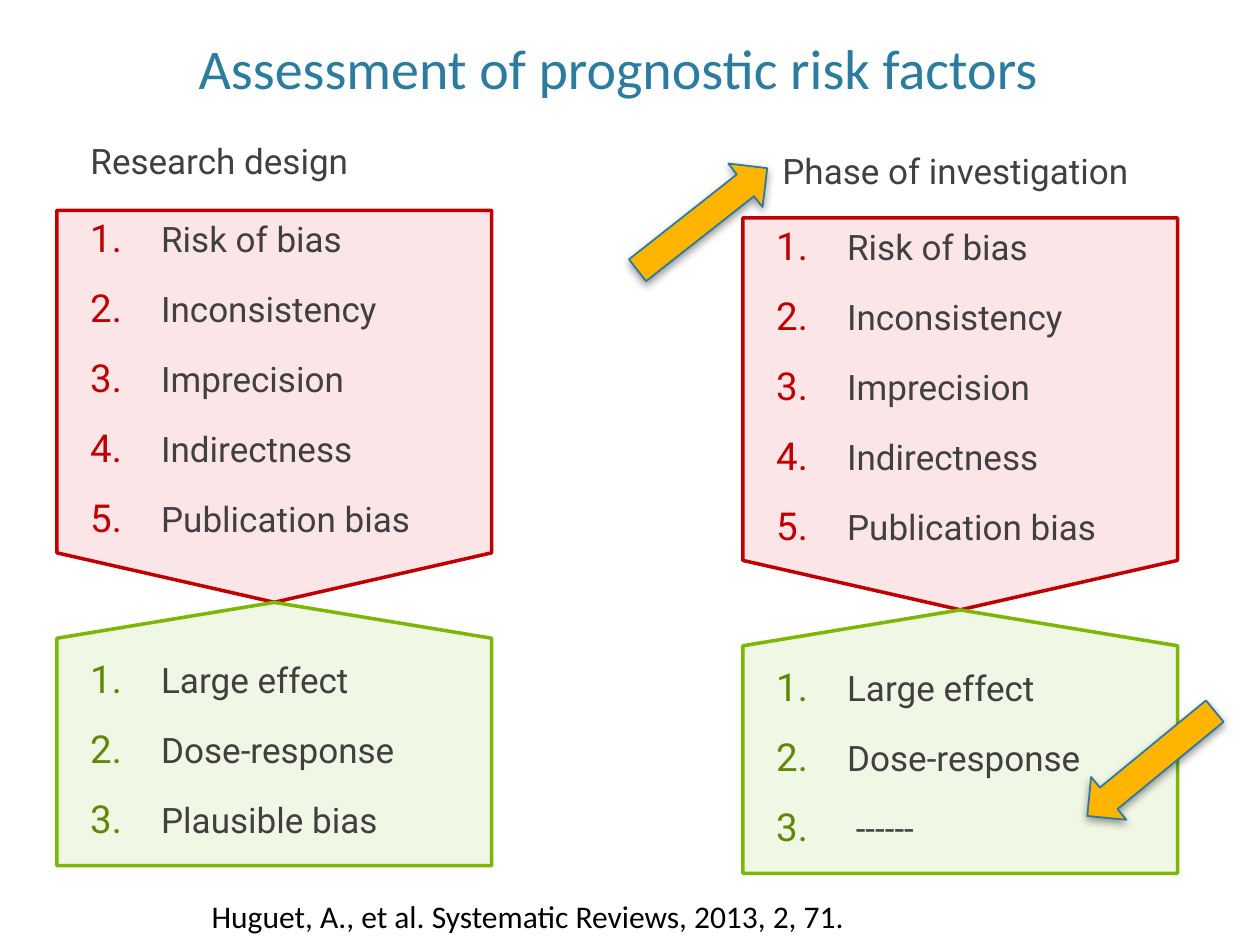
from dataclasses import dataclass
from typing import Any

from lxml.etree import SubElement
from pptx import Presentation
from pptx.dml.color import RGBColor
from pptx.enum.shapes import MSO_SHAPE as Preset
from pptx.enum.text import MSO_ANCHOR as Anchor, PP_ALIGN as Align
from pptx.oxml.ns import qn
from pptx.util import Pt

RED = RGBColor(0xC0, 0x00, 0x00)
RED_TINT = RGBColor(0xE4, 0x00, 0x19)
GREEN = RGBColor(0x7E, 0xB6, 0x06)
DARK_GREEN = RGBColor(0x5E, 0x88, 0x05)
GRAY = RGBColor(0x40, 0x40, 0x40)
TITLE_BLUE = RGBColor(0x2C, 0x7C, 0x9F)
ARROW_BLUE = RGBColor(0x28, 0x7A, 0x9E)
AMBER = RGBColor(0xFF, 0xB4, 0x00)
BLACK = RGBColor(0x00, 0x00, 0x00)

DOWNGRADES = ["Risk of bias", "Inconsistency", "Imprecision", "Indirectness", "Publication bias"]
UPGRADES = ["Large effect", "Dose-response"]


@dataclass
class SlideWriter:
    slide: Any
    body_font: str = "Roboto"
    title_font: str = "Calibri"
    body_size: float = 20
    item_gap: float = 16
    indent: float = 40.5
    panel_width: float = 248.4

    def frame(self, left, top, width, height, wrap=True):
        box = self.slide.shapes.add_textbox(Pt(left), Pt(top), Pt(width), Pt(height))
        box.text_frame.word_wrap = wrap
        return box.text_frame

    def style(self, paragraph, font, size, color):
        paragraph.font.name = font
        paragraph.font.size = Pt(size)
        paragraph.font.color.rgb = color

    def title(self, text, left, top, width, height):
        frame = self.frame(left, top, width, height)
        frame.vertical_anchor = Anchor.BOTTOM
        paragraph = frame.paragraphs[0]
        paragraph.text = text
        paragraph.alignment = Align.CENTER
        self.style(paragraph, self.title_font, 32, TITLE_BLUE)

    def citation(self, text, left, top, width, height):
        paragraph = self.frame(left, top, width, height).paragraphs[0]
        paragraph.text = text
        self.style(paragraph, self.title_font, 18, BLACK)

    def heading(self, text, left, top, width, height):
        paragraph = self.frame(left, top, width, height, wrap=False).paragraphs[0]
        paragraph.text = text
        self.style(paragraph, self.body_font, self.body_size, GRAY)

    def panel(self, left, top, height, rotation, point, tint, border):
        shift = (self.panel_width - height) / 2
        shape = self.slide.shapes.add_shape(
            Preset.PENTAGON, Pt(left + shift), Pt(top - shift), Pt(height), Pt(self.panel_width))
        shape.rotation = rotation
        shape.adjustments[0] = point
        shape.shadow.inherit = False
        shape.fill.solid()
        shape.fill.fore_color.rgb = tint
        color = shape.fill._xPr.find(qn("a:solidFill"))[0]
        SubElement(color, qn("a:alpha"), val="10000")
        shape.line.color.rgb = border
        shape.line.width = Pt(2)

    def numbered_list(self, items, left, top, height, number_color):
        frame = self.frame(left, top, 221, height)
        for index, item in enumerate(items):
            paragraph = frame.paragraphs[0] if index == 0 else frame.add_paragraph()
            paragraph.text = item
            if index:
                paragraph.space_before = Pt(self.item_gap)
            properties = paragraph._p.get_or_add_pPr()
            properties.set("marL", str(Pt(self.indent)))
            properties.set("indent", str(-Pt(self.indent)))
            bullet_color = SubElement(properties, qn("a:buClr"))
            SubElement(bullet_color, qn("a:srgbClr"), val=str(number_color))
            SubElement(properties, qn("a:buSzPct"), val="110000")
            SubElement(properties, qn("a:buFont"), typeface=self.body_font)
            SubElement(properties, qn("a:buAutoNum"), type="arabicPeriod")
            self.style(paragraph, self.body_font, self.body_size, GRAY)

    def arrow(self, left, top, rotation):
        shape = self.slide.shapes.add_shape(Preset.LEFT_ARROW, Pt(left), Pt(top), Pt(94.3), Pt(31.7))
        shape.rotation = rotation
        shape.fill.solid()
        shape.fill.fore_color.rgb = AMBER
        shape.line.color.rgb = ARROW_BLUE
        shape.line.width = Pt(1)
        shape.shadow.inherit = False
        effects = shape._element.spPr.find(qn("a:effectLst"))
        shadow = SubElement(effects, qn("a:outerShdw"), blurRad=str(Pt(5)), dist=str(Pt(2)),
                            dir="5400000", rotWithShape="0")
        color = SubElement(shadow, qn("a:srgbClr"), val=str(BLACK))
        SubElement(color, qn("a:alpha"), val="40000")

    def column(self, left, top, upgrades):
        self.panel(left, top, 224, 90, 0.126, RED_TINT, RED)
        self.numbered_list(DOWNGRADES, left + 12, top + 0.8, 200, RED)
        self.panel(left, top + 224, 150.5, 270, 0.136, GREEN, GREEN)
        self.numbered_list(upgrades, left + 12, top + 252.8, 121.7, DARK_GREEN)


def main():
    presentation = Presentation()
    presentation.slide_width = Pt(720)
    presentation.slide_height = Pt(540)
    slide = presentation.slides.add_slide(presentation.slide_layouts[6])
    writer = SlideWriter(slide)

    writer.column(32.5, 120.2, UPGRADES + ["Plausible bias"])
    writer.heading("Research design", 44.6, 76.3, 166.3, 31.5)
    writer.column(424.5, 124.5, UPGRADES + [" ------"])
    writer.heading("Phase of investigation", 440, 82, 212.4, 31.5)
    writer.title("Assessment of prognostic risk factors", 36.7, 8.6, 633.6, 52.6)
    writer.citation("Huguet, A., et al. Systematic Reviews, 2013, 2, 71.", 113.8, 509, 481.7, 28.8)
    writer.arrow(354.2, 109.4, 141.8)
    writer.arrow(610.6, 420.5, 320.6)

    presentation.save("out.pptx")


if __name__ == "__main__":
    main()
